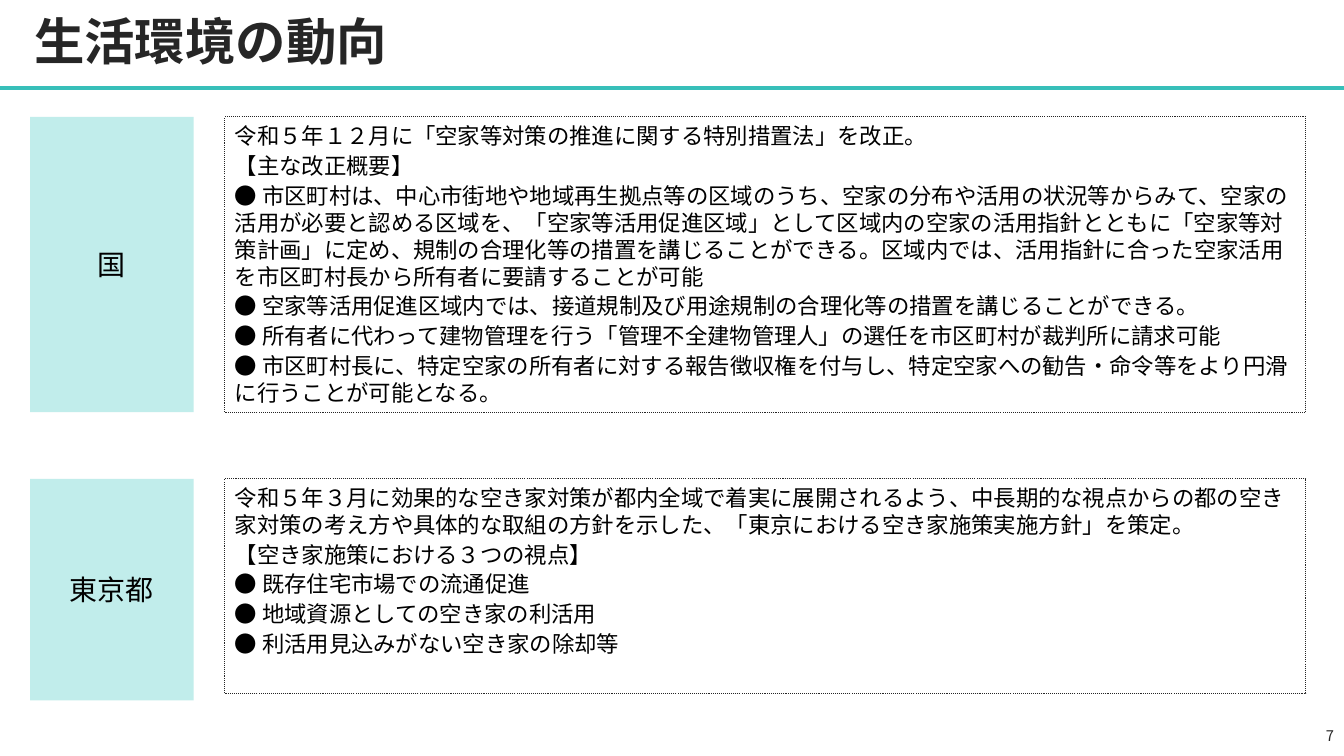
"""Build the slide on trends in the living environment."""
from dataclasses import dataclass

import lxml.etree
import pptx
import pptx.dml.color
import pptx.enum.dml
import pptx.enum.shapes
import pptx.enum.text
import pptx.oxml.ns
import pptx.util

Inches = pptx.util.Inches
Pt = pptx.util.Pt
RGBColor = pptx.dml.color.RGBColor
ALIGN = pptx.enum.text.PP_ALIGN
ANCHOR = pptx.enum.text.MSO_ANCHOR
qn = pptx.oxml.ns.qn

TEAL = RGBColor(0x37, 0xBF, 0xB9)
MINT = RGBColor(0xC1, 0xED, 0xEB)
DARK = RGBColor(0x26, 0x26, 0x26)
BLACK = RGBColor(0, 0, 0)
FONT = "Noto Sans CJK JP"
WIDTH = 13.33


@dataclass
class Band:
    label: str
    top: float
    tall: float
    deep: float
    lines: list[str]


BANDS = [
    Band("国", 1.16, 2.93, 2.93, [
        "令和５年１２月に「空家等対策の推進に関する特別措置法」を改正。",
        "【主な改正概要】",
        "● 市区町村は、中心市街地や地域再生拠点等の区域のうち、空家の分布や活用の状況等からみて、"
        "空家の活用が必要と認める区域を、「空家等活用促進区域」として区域内の空家の活用指針とともに"
        "「空家等対策計画」に定め、規制の合理化等の措置を講じることができる。区域内では、"
        "活用指針に合った空家活用を市区町村長から所有者に要請することが可能",
        "● 空家等活用促進区域内では、接道規制及び用途規制の合理化等の措置を講じることができる。",
        "● 所有者に代わって建物管理を行う「管理不全建物管理人」の選任を市区町村が裁判所に請求可能",
        "● 市区町村長に、特定空家の所有者に対する報告徴収権を付与し、"
        "特定空家への勧告・命令等をより円滑に行うことが可能となる。",
    ]),
    Band("東京都", 4.75, 2.2, 2.13, [
        "令和５年３月に効果的な空き家対策が都内全域で着実に展開されるよう、"
        "中長期的な視点からの都の空き家対策の考え方や具体的な取組の方針を示した、"
        "「東京における空き家施策実施方針」を策定。",
        "【空き家施策における３つの視点】",
        "● 既存住宅市場での流通促進",
        "● 地域資源としての空き家の利活用",
        "● 利活用見込みがない空き家の除却等",
    ]),
]


def write(shape, lines: list[str], *, size: float, color=BLACK, bold=False,
          align=ALIGN.LEFT, anchor=ANCHOR.MIDDLE, before=0, pitch=None) -> None:
    """Fill a shape with formatted paragraphs."""
    frame = shape.text_frame
    frame.word_wrap = True
    frame.auto_size = pptx.enum.text.MSO_AUTO_SIZE.NONE
    frame.vertical_anchor = anchor
    for n, line in enumerate(lines):
        para = frame.add_paragraph() if n else frame.paragraphs[0]
        para.alignment = align
        para.space_before = Pt(before)
        para.line_spacing = pitch
        run = para.add_run()
        run.text = line
        font = run.font
        font.name, font.size, font.bold = FONT, Pt(size), bold
        font.color.rgb = color
        east = lxml.etree.SubElement(run._r.get_or_add_rPr(), qn("a:ea"))
        east.set("typeface", FONT)


def add_text(slide, left: float, top: float, wide: float, tall: float):
    """Add an empty text box."""
    return slide.shapes.add_textbox(
        Inches(left), Inches(top), Inches(wide), Inches(tall))


def add_box(slide, left: float, top: float, wide: float, tall: float):
    """Add a rectangle with no shadow, fill or line."""
    box = slide.shapes.add_shape(
        pptx.enum.shapes.MSO_SHAPE.RECTANGLE,
        Inches(left), Inches(top), Inches(wide), Inches(tall))
    box.shadow.inherit = False
    box.fill.background()
    box.line.fill.background()
    return box


def add_rule(slide, top: float) -> None:
    """Draw the rule under the title."""
    rule = slide.shapes.add_connector(
        pptx.enum.shapes.MSO_CONNECTOR.STRAIGHT,
        Inches(0), Inches(top), Inches(WIDTH), Inches(top))
    rule.line.color.rgb = TEAL
    rule.line.width = Pt(3)
    lxml.etree.SubElement(rule._element.spPr, qn("a:effectLst"))


def add_band(slide, band: Band) -> None:
    """Draw one label with its framed details."""
    label = add_box(slide, 0.3, band.top, 1.62, band.tall)
    label.fill.solid()
    label.fill.fore_color.rgb = MINT
    write(label, [band.label], size=20, align=ALIGN.CENTER)

    frame = add_box(slide, 2.23, band.top, 10.72, band.deep)
    frame.line.color.rgb = DARK
    frame.line.width = Pt(0.75)
    frame.line.dash_style = pptx.enum.dml.MSO_LINE.ROUND_DOT
    write(frame, band.lines, size=16, anchor=ANCHOR.TOP, before=2,
          pitch=Pt(19.3))


def main() -> None:
    """Build and save the slide."""
    deck = pptx.Presentation()
    deck.slide_width, deck.slide_height = Inches(WIDTH), Inches(7.5)
    slide = deck.slides.add_slide(deck.slide_layouts[6])
    add_rule(slide, 0.87)
    write(add_text(slide, 0.24, 0, 12.83, 0.87), ["生活環境の動向"],
          size=36, color=DARK, bold=True, pitch=0.9)
    write(add_text(slide, 10.33, 7.1, 3, 0.4), ["7"],
          size=10.5, color=DARK, align=ALIGN.RIGHT)
    for band in BANDS:
        add_band(slide, band)
    deck.save("out.pptx")


if __name__ == "__main__":
    main()
